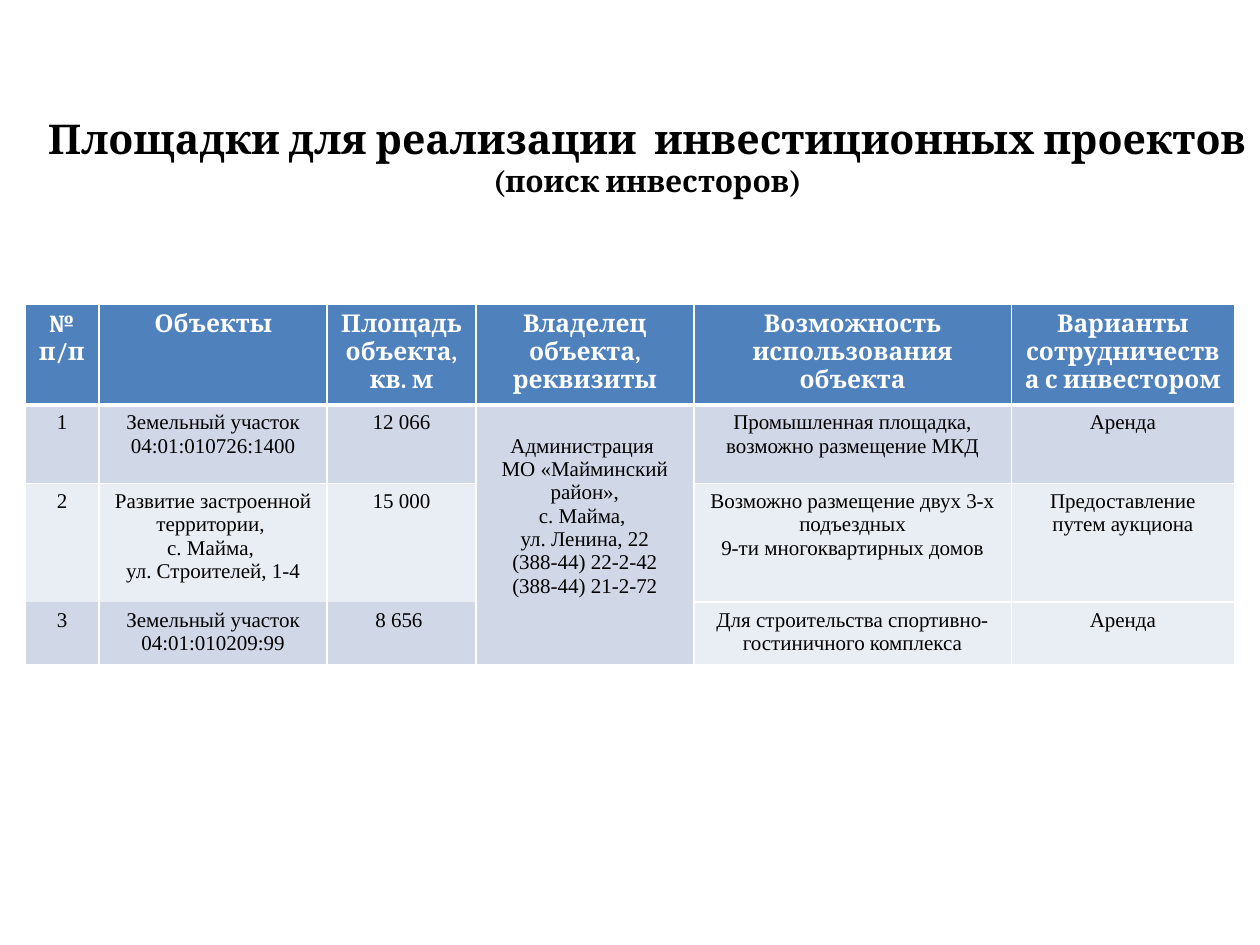
from pptx import Presentation
from pptx.dml.color import RGBColor
from pptx.enum.text import MSO_ANCHOR, PP_ALIGN
from pptx.oxml import parse_xml
from pptx.oxml.ns import nsdecls
from pptx.util import Pt

CENTER = PP_ALIGN.CENTER
MIDDLE = MSO_ANCHOR.MIDDLE
BLACK, WHITE = "000000", "FFFFFF"
HEADER_FILL, DARK_BAND, LIGHT_BAND = "4F81BD", "D0D8E8", "E9EDF4"

COLUMN_WIDTHS = [42.5, 130.3, 85, 124.5, 181.5, 127.5]
ROW_HEIGHTS = [42, 45, 67.7, 0, 36]
HEADERS = ["№ п/п", "Объекты", "Площадь объекта, кв. м", "Владелец объекта, реквизиты",
           "Возможность использования объекта", "Варианты сотрудничества с инвестором"]
OWNER = ("Администрация \nМО «Майминский район»,\nс. Майма, \nул. Ленина, 22\n"
         "(388-44) 22-2-42\n(388-44) 21-2-72")
OWNER_COLUMN = 3
# Body text by table row; None marks a cell covered by a merge
SITES = [
    ["1", "Земельный участок\n04:01:010726:1400", "12 066", OWNER,
     "Промышленная площадка, возможно размещение МКД", "Аренда"],
    ["2", "Развитие застроенной территории, \nс. Майма, \nул. Строителей, 1-4", "15 000", None,
     "Возможно размещение двух 3-х подъездных\n9-ти многоквартирных домов",
     "Предоставление путем аукциона"],
    ["3", "Земельный участок\n04:01:010209:99", "8 656 ", None, None, None],
    [None, None, None, None,
     "Для строительства спортивно-гостиничного комплекса", "Аренда"],
]
BANDS = [DARK_BAND, LIGHT_BAND, DARK_BAND, LIGHT_BAND]
# Column: (first row, last row) of its merged cell
MERGES = {0: (3, 4), 1: (3, 4), 2: (3, 4), 3: (1, 4), 4: (2, 3), 5: (2, 3)}


def color(value):
    return RGBColor.from_string(value)


def style_font(font, name, size, ink, bold):
    font.name, font.size, font.bold = name, Pt(size), bold
    font.color.rgb = color(ink)


def add_title(page, left, top, width, height):
    box = page.shapes.add_textbox(Pt(left), Pt(top), Pt(width), Pt(height))
    frame = box.text_frame
    frame.word_wrap = True
    frame.vertical_anchor = MIDDLE
    para = frame.paragraphs[0]
    para.text = "Площадки для реализации  инвестиционных проектов\v(поиск инвесторов)"
    para.alignment = CENTER
    for span, size in zip(para.runs, (23.4, 17.1)):
        style_font(span.font, "Cambria", size, BLACK, True)


def set_borders(cell, bottom_width):
    properties = cell._tc.get_or_add_tcPr()
    for side, width in (("L", 1), ("R", 1), ("T", 1), ("B", bottom_width)):
        properties.append(parse_xml(
            f'<a:ln{side} {nsdecls("a")} w="{Pt(width)}"><a:solidFill>'
            f'<a:srgbClr val="{WHITE}"/></a:solidFill></a:ln{side}>'))


def fill_cell(cell, text, fill, is_header):
    set_borders(cell, 3 if is_header else 1)
    cell.fill.solid()
    cell.fill.fore_color.rgb = color(fill)
    if text is None:
        return
    cell.text_frame.text = text
    for para in cell.text_frame.paragraphs:
        para.alignment = CENTER
        for span in para.runs:
            if is_header:
                style_font(span.font, "Cambria", 14, WHITE, True)
            else:
                style_font(span.font, "Times New Roman", 12, BLACK, False)


def add_sites_table(page, left, top):
    frame = page.shapes.add_table(len(ROW_HEIGHTS), len(COLUMN_WIDTHS), Pt(left), Pt(top),
                                  Pt(sum(COLUMN_WIDTHS)), Pt(sum(ROW_HEIGHTS)))
    table = frame.table
    for column, width in zip(table.columns, COLUMN_WIDTHS):
        column.width = Pt(width)
    for row, height in zip(table.rows, ROW_HEIGHTS):
        row.height = Pt(height)

    # Merged cells
    for column, (first, last) in MERGES.items():
        table.cell(first, column).merge(table.cell(last, column))

    # Header and body
    for r, (texts, fill) in enumerate(zip([HEADERS] + SITES, [HEADER_FILL] + BANDS)):
        for c, text in enumerate(texts):
            fill_cell(table.cell(r, c), text, fill, r == 0)

    # The owner's details start one line lower
    table.cell(1, OWNER_COLUMN).margin_top = Pt(17)


def main():
    deck = Presentation()
    deck.slide_width, deck.slide_height = Pt(720), Pt(540)
    page = deck.slides.add_slide(deck.slide_layouts[6])
    add_title(page, 10, 49, 720, 80)
    add_sites_table(page, 14.2, 173.7)
    deck.save("out.pptx")


if __name__ == "__main__":
    main()
